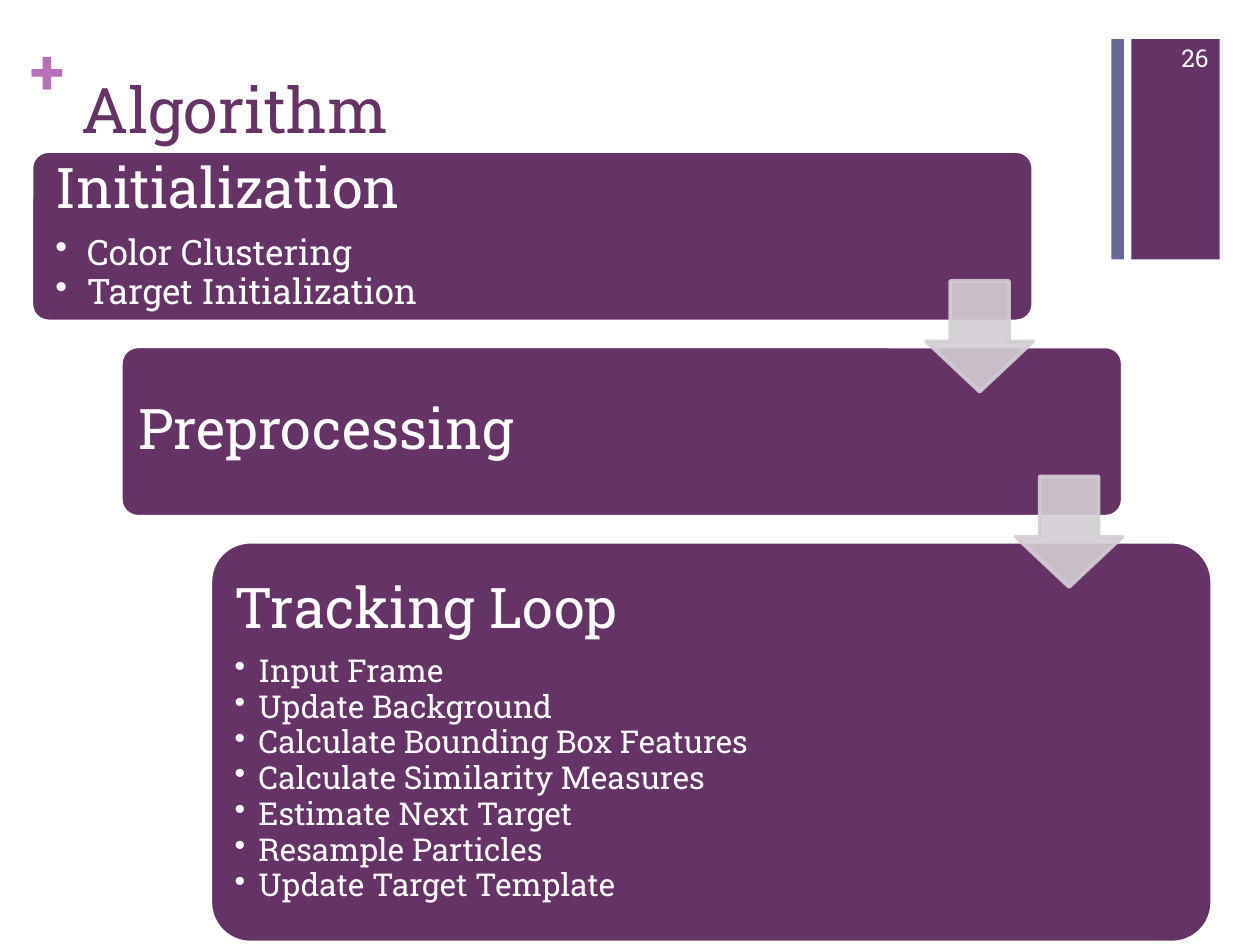
import pptx
import pptx.util
import pptx.dml.color
import pptx.enum.shapes
import pptx.enum.text
import pptx.oxml.ns
from lxml import etree

Inches, Pt = pptx.util.Inches, pptx.util.Pt
RGB = pptx.dml.color.RGBColor
KIND = pptx.enum.shapes.MSO_SHAPE
ALIGN = pptx.enum.text.PP_ALIGN
ANCHOR = pptx.enum.text.MSO_ANCHOR
qn = pptx.oxml.ns.qn

PLUM = RGB(0x66, 0x33, 0x66)
BLUE = RGB(0x66, 0x66, 0x99)
PINK = RGB(0xB8, 0x70, 0xB8)
GREY = RGB(0xD3, 0xCE, 0xD3)
WHITE = RGB(0xFF, 0xFF, 0xFF)
FONT = "Roboto Slab"

# Content: heading, height, left inset, bullet size, bullet indent, bullets
STEPS = [
    ("Initialization", 1.35, 0.15, 20, 0.25,
     ["Color Clustering", "Target Initialization"]),
    ("Preprocessing", 1.35, 0.1, 20, 0.25, []),
    ("Tracking Loop", 3.18, 0.1, 18, 0.19,
     ["Input Frame", "Update Background", "Calculate Bounding Box Features",
      "Calculate Similarity Measures", "Estimate Next Target",
      "Resample Particles", "Update Target Template"]),
]
# Labels: text, place, size, colour, bold, alignment, anchor, insets
LABELS = [
    ("+", (0.24, 0.25, 0.29, 0.61), 36, PINK, True, ALIGN.LEFT, ANCHOR.TOP,
     (0, 0, 0, 0)),
    ("Algorithm", (0.55, 0.53, 8.26, 1.22), 36, PLUM, False, ALIGN.LEFT,
     ANCHOR.TOP, (0.1, 0.03, 0.1, 0.05)),
    ("26", (9.08, 0.26, 0.61, 0.4), 14, WHITE, False, ALIGN.RIGHT,
     ANCHOR.MIDDLE, (0.1, 0.05, 0.1, 0.05)),
]
BARS = [((8.98, 0.31, 0.7, 1.75), PLUM), ((8.82, 0.31, 0.1, 1.75), BLUE)]

# Staircase layout
LEFT, TOP, WIDE, SHIFT, GAP = 0.25, 1.2, 7.95, 0.71, 0.2
HEAD_W, HEAD_H, RISE = 0.85, 0.88, 0.52

deck = pptx.Presentation()
deck.slide_width, deck.slide_height = Inches(10), Inches(7.5)
slide = deck.slides.add_slide(deck.slide_layouts[6])


def draw(kind, place, fill, line=None, adjust=()):
    shape = slide.shapes.add_shape(kind, *map(Inches, place))
    shape.shadow.inherit = False
    shape.fill.solid()
    shape.fill.fore_color.rgb = fill
    if line is None:
        shape.line.fill.background()
    else:
        shape.line.color.rgb = line
        shape.line.width = Pt(2)
    for i, value in enumerate(adjust):
        shape.adjustments[i] = value
    return shape


def frame(shape, insets, anchor):
    box = shape.text_frame
    sides = ("margin_left", "margin_top", "margin_right", "margin_bottom")
    for side, value in zip(sides, insets):
        setattr(box, side, Inches(value))
    box.word_wrap = True
    box.vertical_anchor = anchor
    return box


def write(para, text, size, color, bold=False, **form):
    for name, value in form.items():
        setattr(para, name, value)
    run = para.add_run()
    run.text = text
    run.font.color.rgb = color
    for name, value in dict(name=FONT, size=Pt(size), bold=bold).items():
        setattr(run.font, name, value)


def bullet(para, indent):
    props = para._p.get_or_add_pPr()
    props.set("marL", str(Inches(indent)))
    props.set("indent", str(-Inches(indent)))
    etree.SubElement(props, qn("a:buChar")).set("char", "•")


# Corner bars and labels
for place, color in BARS:
    draw(KIND.RECTANGLE, place, color)
for text, place, size, color, bold, align, anchor, insets in LABELS:
    label = slide.shapes.add_textbox(*map(Inches, place))
    box = frame(label, insets, anchor)
    write(box.paragraphs[0], text, size, color, bold, alignment=align)

# Step boxes
heads = []
top = TOP
for i, (title, high, inset, size, indent, points) in enumerate(STEPS):
    left = LEFT + i * SHIFT
    step = draw(KIND.ROUNDED_RECTANGLE, (left, top, WIDE, high), PLUM, WHITE, [0.1])
    box = frame(step, (inset, 0.1, 1.57, 0.1), ANCHOR.MIDDLE)
    form = dict(alignment=ALIGN.LEFT, line_spacing=0.9)
    write(box.paragraphs[0], title, 32, WHITE, space_after=Pt(8), **form)
    for point in points:
        para = box.add_paragraph()
        bullet(para, indent)
        write(para, point, size, WHITE, level=1, space_after=Pt(1), **form)
    if i:
        heads.append((left - SHIFT + WIDE - HEAD_W, top - RISE, HEAD_W, HEAD_H))
    top += high + GAP

# Arrows between steps, slightly see-through
for place in heads:
    arrow = draw(KIND.DOWN_ARROW, place, GREY, GREY, [0.55, 0.47])
    for color in arrow._element.spPr.iter(qn("a:srgbClr")):
        etree.SubElement(color, qn("a:alpha")).set("val", "90000")

deck.save("out.pptx")
